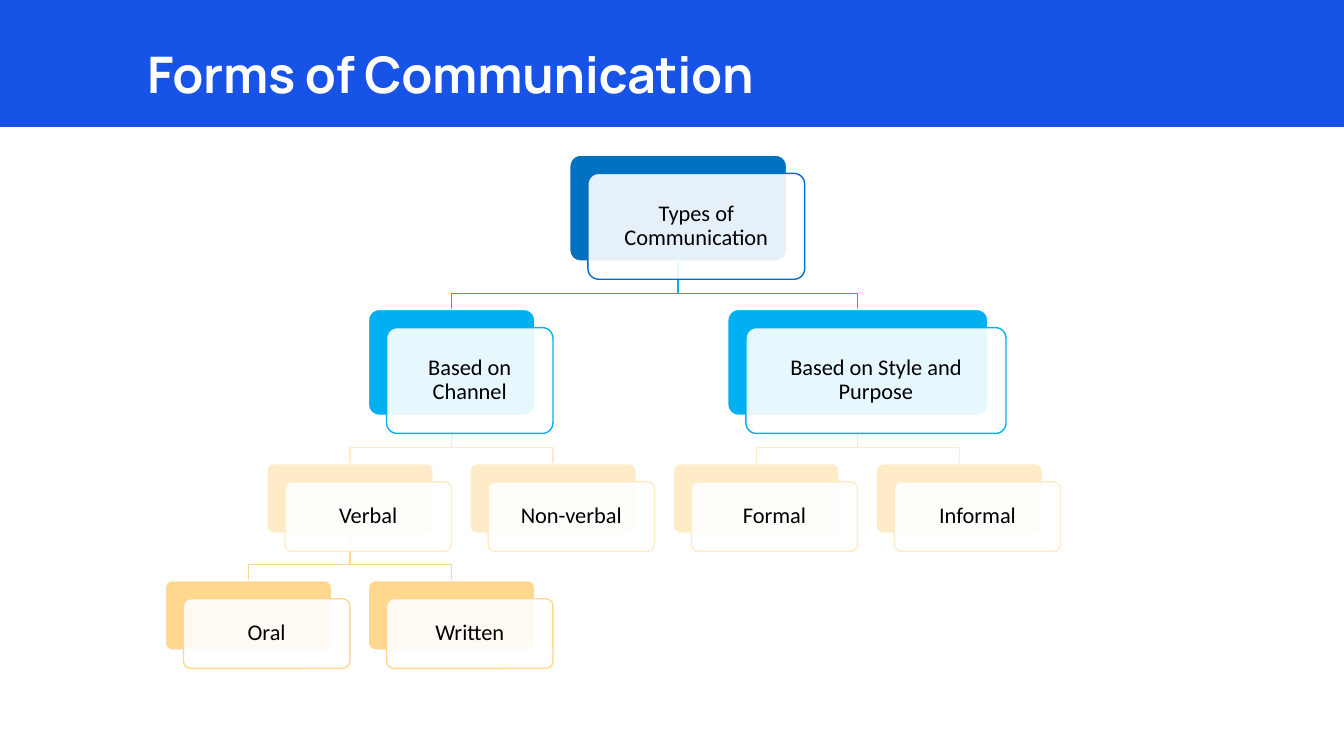
from dataclasses import dataclass
from typing import Iterator

import pptx
import pptx.dml.color
import pptx.enum.shapes
import pptx.enum.text
import pptx.oxml
import pptx.oxml.ns
import pptx.util

Inches = pptx.util.Inches
Pt = pptx.util.Pt
RGB = pptx.dml.color.RGBColor.from_string
Preset = pptx.enum.shapes.MSO_SHAPE


@dataclass(frozen=True)
class Theme:
    banner: str = "1853E7"
    white: str = "FFFFFF"
    ink: str = "000000"
    title_font: str = "Manrope"
    topic_font: str = "Calibri"
    title_size: int = 36
    topic_size: int = 16
    line_width: int = 1
    card_opacity: int = 90


@dataclass(frozen=True)
class Level:
    top: float
    height: float
    color: str


@dataclass(frozen=True)
class Topic:
    label: str
    slot: int = 0
    width: float = 1.65
    children: tuple["Topic", ...] = ()


THEME = Theme()
LEVELS = (
    Level(1.54, 1.05, "0070C0"),
    Level(3.07, 1.05, "00B0F0"),
    Level(4.6, 0.69, "FFEBC7"),
    Level(5.76, 0.69, "FFD78F"),
)
FIRST_LEFT, LAST_LEFT, LAST_SLOT = 1.64, 8.69, 7
CARD_OFFSET = 0.18
ELBOW_RISE = 0.16

COMMUNICATION = Topic("Types of Communication", width=2.15, children=(
    Topic("Based on Channel", children=(
        Topic("Verbal", children=(Topic("Oral", 0), Topic("Written", 2))),
        Topic("Non-verbal", 3),
    )),
    Topic("Based on Style and Purpose", width=2.58, children=(
        Topic("Formal", 5),
        Topic("Informal", 7),
    )),
))


def center_of(topic: Topic) -> float:
    """A leaf sits on its slot; a parent is centred over its children's outer edges."""
    if not topic.children:
        step = (LAST_LEFT - FIRST_LEFT) / LAST_SLOT
        return FIRST_LEFT + topic.slot * step + topic.width / 2
    first, last = topic.children[0], topic.children[-1]
    left = center_of(first) - first.width / 2
    right = center_of(last) + last.width / 2
    return (left + right) / 2


def walk(topic: Topic, depth: int = 0) -> Iterator[tuple[Topic, int]]:
    yield topic, depth
    for child in topic.children:
        yield from walk(child, depth + 1)


def add_panel(slide, preset, left: float, top: float, width: float, height: float,
              fill: str, line: str | None = None):
    panel = slide.shapes.add_shape(
        preset, Inches(left), Inches(top), Inches(width), Inches(height))
    panel.shadow.inherit = False
    panel.fill.solid()
    panel.fill.fore_color.rgb = RGB(fill)
    if line is None:
        panel.line.fill.background()
    else:
        panel.line.color.rgb = RGB(line)
        panel.line.width = Pt(THEME.line_width)
    return panel


def add_run(paragraph, text: str, font_name: str, size: int, color: str,
            bold: bool = False):
    run = paragraph.add_run()
    run.text = text
    run.font.name = font_name
    run.font.size = Pt(size)
    run.font.bold = bold
    run.font.color.rgb = RGB(color)
    return run


def set_opacity(shape, percent: int) -> None:
    color = shape.fill._xPr.find(".//" + pptx.oxml.ns.qn("a:srgbClr"))
    alpha = pptx.oxml.parse_xml(
        f'<a:alpha {pptx.oxml.ns.nsdecls("a")} val="{percent * 1000}"/>')
    color.append(alpha)


def add_header(slide, title: str) -> None:
    add_panel(slide, Preset.RECTANGLE, 0, 0, 13.33, 1.26, THEME.banner)
    heading = slide.shapes.add_textbox(
        Inches(1.36), Inches(0.3), Inches(10.98), Inches(0.85))
    frame = heading.text_frame
    frame.word_wrap = True
    frame.vertical_anchor = pptx.enum.text.MSO_ANCHOR.MIDDLE
    run = add_run(frame.paragraphs[0], title, THEME.title_font,
                  THEME.title_size, THEME.white, bold=True)
    run.font._element.set("spc", "-20")


def add_branch(slide, parent: Topic, child: Topic, depth: int) -> None:
    """Draw the elbow from a parent at the given depth down to its child."""
    above, below = LEVELS[depth], LEVELS[depth + 1]
    start_x, end_x = Inches(center_of(parent)), Inches(center_of(child))
    start_y, end_y = Inches(above.top + above.height), Inches(below.top)
    elbow_y = Inches(below.top - ELBOW_RISE)
    outline = slide.shapes.build_freeform(start_x, start_y)
    outline.add_line_segments(
        [(start_x, elbow_y), (end_x, elbow_y), (end_x, end_y)], close=False)
    branch = outline.convert_to_shape()
    branch.shadow.inherit = False
    branch.fill.background()
    branch.line.color.rgb = RGB(below.color)
    branch.line.width = Pt(THEME.line_width)


def add_topic(slide, topic: Topic, depth: int) -> None:
    """Draw a coloured backing with a translucent, labelled card in front."""
    level = LEVELS[depth]
    left = center_of(topic) - topic.width / 2
    backing = add_panel(slide, Preset.ROUNDED_RECTANGLE, left, level.top,
                        topic.width, level.height, level.color, THEME.white)
    card = add_panel(slide, Preset.ROUNDED_RECTANGLE, left + CARD_OFFSET,
                     level.top + CARD_OFFSET, topic.width, level.height,
                     THEME.white, level.color)
    for panel in (backing, card):
        panel.adjustments[0] = 0.1
    set_opacity(card, THEME.card_opacity)

    frame = card.text_frame
    frame.word_wrap = True
    frame.vertical_anchor = pptx.enum.text.MSO_ANCHOR.MIDDLE
    frame.margin_left = frame.margin_right = Inches(0.11)
    frame.margin_top = frame.margin_bottom = Inches(0.08)
    paragraph = frame.paragraphs[0]
    paragraph.alignment = pptx.enum.text.PP_ALIGN.CENTER
    paragraph.line_spacing = 0.9
    add_run(paragraph, topic.label, THEME.topic_font, THEME.topic_size, THEME.ink)


def main() -> None:
    deck = pptx.Presentation()
    deck.slide_width, deck.slide_height = Inches(13.33), Inches(7.5)
    slide = deck.slides.add_slide(deck.slide_layouts[6])
    add_header(slide, "Forms of Communication")
    for topic, depth in walk(COMMUNICATION):
        for child in topic.children:
            add_branch(slide, topic, child, depth)
    for topic, depth in walk(COMMUNICATION):
        add_topic(slide, topic, depth)
    deck.save("out.pptx")


if __name__ == "__main__":
    main()
